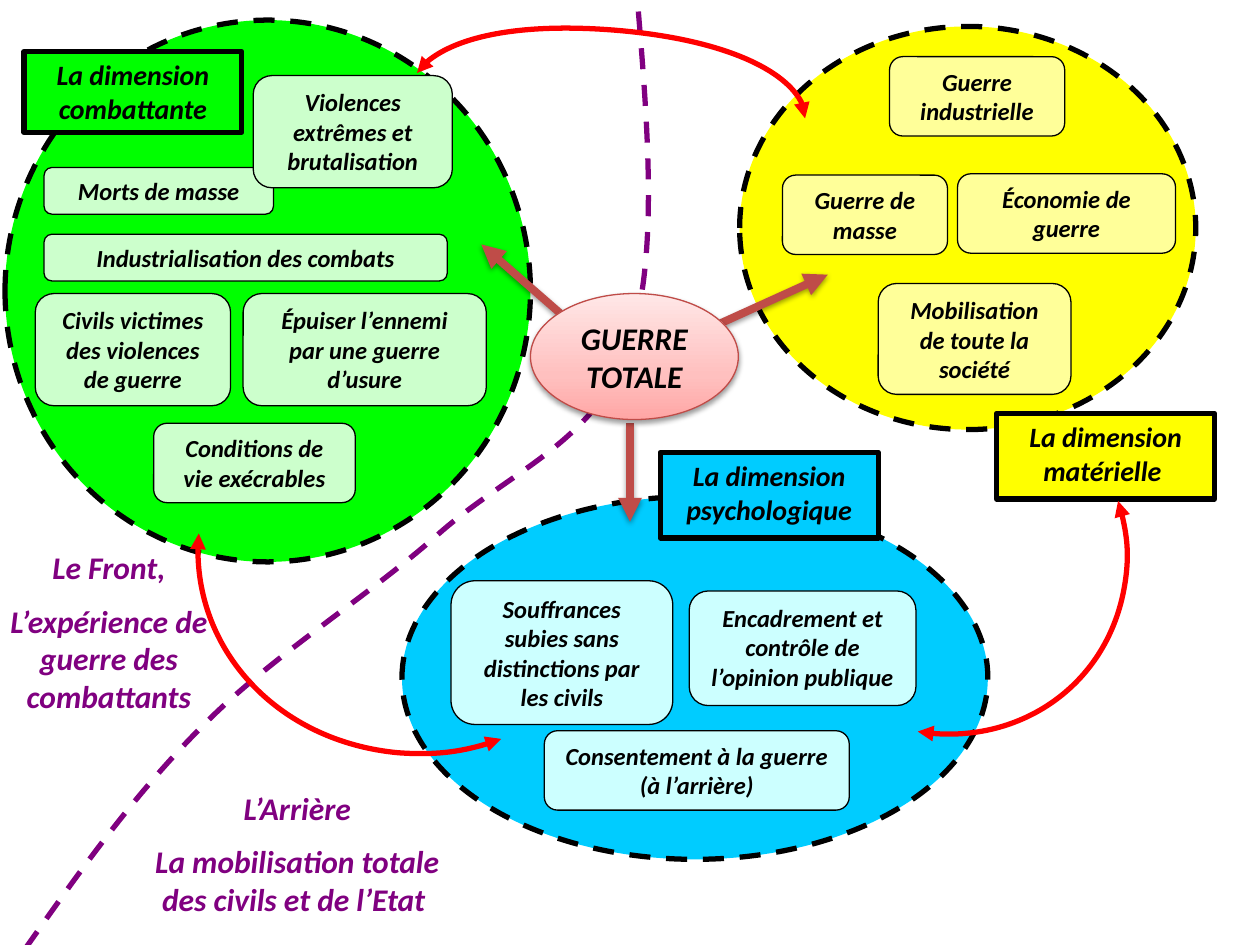
"""Concept map of total war: three dimensions around one core, on a 100 by 75 grid."""
from copy import deepcopy
from math import cos, radians, sin

from lxml import etree
from pptx import Presentation
from pptx.dml.color import RGBColor
from pptx.enum.dml import MSO_LINE
from pptx.enum.shapes import MSO_CONNECTOR, MSO_SHAPE
from pptx.enum.text import MSO_ANCHOR, MSO_AUTO_SIZE, PP_ALIGN
from pptx.oxml.ns import qn
from pptx.util import Inches, Pt

OVAL, RECT, ROUND = MSO_SHAPE.OVAL, MSO_SHAPE.RECTANGLE, MSO_SHAPE.ROUNDED_RECTANGLE
DASH, STRAIGHT = MSO_LINE.DASH, MSO_CONNECTOR.STRAIGHT
TOP, MIDDLE, CENTER = MSO_ANCHOR.TOP, MSO_ANCHOR.MIDDLE, PP_ALIGN.CENTER
GROW, FIXED = MSO_AUTO_SIZE.SHAPE_TO_FIT_TEXT, MSO_AUTO_SIZE.NONE
CELL = Inches(0.1)
BLACK, PURPLE, RED, BRICK = "000000", "800080", "FF0000", "BF4C48"
color = RGBColor.from_string

prs = Presentation()
prs.slide_width, prs.slide_height = 100 * CELL, 75 * CELL
slide = prs.slides.add_slide(prs.slide_layouts[6])
shapes = slide.shapes


def place(kind, at, lines=(), size=14, ink=BLACK, fill=None, edge=BLACK, width=0.75):
    """Place a preset shape, or a text box when kind is None, with its text."""
    frame = [round(v * CELL) for v in at]
    if kind is None:
        item = shapes.add_textbox(*frame)
    else:
        item = shapes.add_shape(kind, *frame)
        item.shadow.inherit = False
        item.fill.solid()
        item.fill.fore_color.rgb = color(fill)
        item.line.color.rgb = color(edge)
        item.line.width = Pt(width)
    text = item.text_frame
    text.word_wrap = True
    text.vertical_anchor = TOP
    if lines:
        text.auto_size = GROW
    for i, line in enumerate(lines):
        paragraph = text.add_paragraph() if i else text.paragraphs[0]
        paragraph.alignment = CENTER
        if i and kind is None:
            paragraph.space_before = Pt(size / 2)
        run = paragraph.add_run()
        run.text = line
        run.font.name, run.font.size = "Calibri", Pt(size)
        run.font.bold = run.font.italic = True
        run.font.color.rgb = color(ink)
    return item


def draw_curve(knots, ink, turn=0, middle=(0, 0)):
    """Draw a chain of cubic Bezier arcs in a frame turned about its middle."""
    c, s = cos(radians(turn)), sin(radians(turn))
    mx, my = middle
    points = [((mx + (x - mx) * c + (y - my) * s) * CELL,
               (my - (x - mx) * s + (y - my) * c) * CELL) for x, y in knots]
    builder = shapes.build_freeform(*points[0])
    builder.add_line_segments(points[1:], close=False)
    curve = builder.convert_to_shape()
    straights = list(curve._element.iter(qn("a:lnTo")))
    outline = straights[0].getparent()
    for i, straight in enumerate(straights):
        if i % 3 == 0:
            bend = etree.SubElement(outline, qn("a:cubicBezTo"))
        bend.append(straight[0])
        outline.remove(straight)
    curve.rotation = turn
    curve.shadow.inherit = False
    curve.fill.background()
    curve.line.color.rgb = color(ink)
    curve.line.width = Pt(3)
    return curve


front_line = draw_curve(
    [(2, 75.3), (6.3, 69.2), (10.6, 63.1), (16.1, 57.6), (21.5, 52.1), (29.3, 47.3),
     (34.9, 42.3), (40.5, 37.4), (47.1, 35.1), (49.8, 27.9), (52.4, 20.6), (51.4, 9.8),
     (50.5, -1.1)], PURPLE)
front_line.line.dash_style = DASH

dimensions = [
    ("FFFF00", "FFFF99", (58.7, 2.1, 36.2, 32),
     "La dimension matérielle ", (79.1, 32.8, 17.3, 6.8), [
         ((62.1, 13.9, 13.1, 6.3), ["Guerre de masse"]),
         ((76, 13.8, 17.3, 6.3), ["Économie de guerre"]),
         ((69.7, 22.5, 15.3, 8.8), ["Mobilisation de toute la société"]),
         ((70.6, 4.5, 13.9, 6.3), ["Guerre industrielle"])]),
    ("00CCFF", "CCFFFF", (31.9, 39.4, 46.5, 28.8),
     "La dimension psychologique", (52.4, 35.9, 17.3, 6.8), [
         ((54.7, 46.9, 18, 9.1), ["Encadrement et contrôle de l’opinion publique"]),
         ((43.2, 58, 24.2, 6.3), ["Consentement à la guerre (à l’arrière)"]),
         ((35.8, 46.1, 17.6, 11.4),
          ["Souffrances subies sans distinctions par les civils"])]),
    ("00FF00", "CCFFCC", (0.4, 1.6, 41.7, 43),
     "La dimension combattante", (1.9, 4.1, 17.3, 6.4), [
         ((3.5, 18.6, 32, 3.7), ["Industrialisation des combats"]),
         ((12.2, 33.6, 16, 6.3), ["Conditions de vie exécrables"]),
         ((19.3, 23.3, 19.3, 8.9), ["Épuiser l’ennemi", "par une guerre d’usure"]),
         ((3.5, 13.3, 18.2, 3.7), ["Morts de masse"]),
         ((2.8, 23.3, 15.5, 8.9), ["Civils victimes des violences de guerre"]),
         ((20.1, 6, 15.8, 8.9), ["Violences extrêmes et brutalisation"])]),
]
for strong, pale, zone_at, title, title_at, themes in dimensions:
    zone = place(OVAL, zone_at, fill=strong, width=3)
    zone.line.dash_style = DASH
    place(RECT, title_at, [title], size=16, fill=strong, width=3)
    for theme_at, lines in themes:
        place(ROUND, theme_at, lines, fill=pale)

place(None, (-2, 43, 21.3, 14.6),
      ["Le Front,", "L’expérience de guerre des combattants"], 18, PURPLE)
place(None, (9.8, 62.1, 27.6, 11.6),
      ["L’Arrière", "La mobilisation totale des civils et de l’Etat "], 18, PURPLE)

links = [
    (99.6, (81.6, 49), [(88.7, 39.7), (89.4, 41.9), (89.6, 44.2), (89.2, 46.5),
                        (87.9, 54.1), (80.6, 59.3), (72.8, 58)]),
    (185.4, (27.7, 51.4), [(39.8, 58.6), (37.2, 59.6), (34.4, 59.9), (31.6, 59.7),
                           (22.1, 58.8), (15, 51), (15.8, 42.3)]),
    (4.8, (48.65, 5.25), [(33.1, 5.8), (34.7, 3.2), (41.3, 1.8), (48.8, 2.4),
                          (57.4, 3.1), (64.1, 6.3), (63.9, 9.4)]),
]
for turn, middle, knots in links:
    stroke = draw_curve(knots, RED, turn, middle).line._get_or_add_ln()
    for end in ("a:headEnd", "a:tailEnd"):
        etree.SubElement(stroke, qn(end), type="triangle")

raised = []
for ends in [(44.5, 24.9, 38.2, 19.4), (57.1, 25.7, 65.7, 21.8), (50, 33.6, 50, 41.4)]:
    ray = shapes.add_connector(STRAIGHT, *[round(v * CELL) for v in ends])
    ray.line.color.rgb = color(BRICK)
    ray.line.width = Pt(4.5)
    etree.SubElement(ray.line._get_or_add_ln(), qn("a:tailEnd"), type="triangle")
    raised.append(ray)

core = place(OVAL, (42.1, 23.3, 16.5, 10), ["GUERRE", "TOTALE"], 18,
             fill="FFA6A5", edge=BRICK)
core.text_frame.auto_size = FIXED
core.text_frame.word_wrap = False
core.text_frame.vertical_anchor = MIDDLE
core.fill.gradient()
core.fill.gradient_angle = 90
stop_list = core._element.spPr.find(qn("a:gradFill")).find(qn("a:gsLst"))
stop_list.insert(1, deepcopy(stop_list[0]))
for stop, (share, tint) in zip(core.fill.gradient_stops,
                               [(0, "FFA6A5"), (0.35, "FFC0BF"), (1, "FFE7E7")]):
    stop.position = share
    stop.color.rgb = color(tint)
raised.append(core)

for item in raised:
    properties = item._element.spPr
    effects = properties.find(qn("a:effectLst"))
    if effects is None:
        effects = etree.SubElement(properties, qn("a:effectLst"))
    shadow = etree.SubElement(effects, qn("a:outerShdw"), blurRad=str(Pt(3.1)),
                              dist=str(Pt(1.6)), dir="5400000", rotWithShape="0")
    shade = etree.SubElement(shadow, qn("a:srgbClr"), val=BLACK)
    etree.SubElement(shade, qn("a:alpha"), val="38000")

prs.save("out.pptx")
